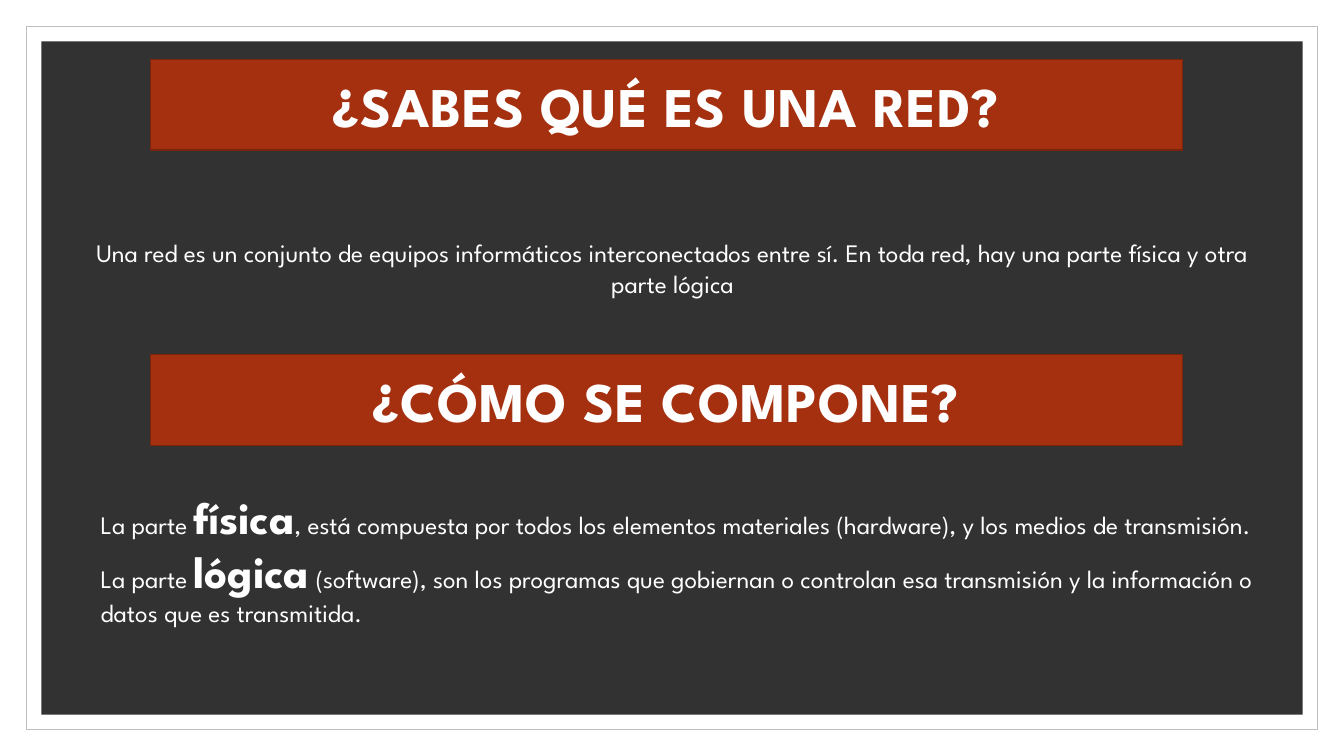
from dataclasses import dataclass

from lxml.etree import SubElement
from pptx import Presentation
from pptx.dml.color import RGBColor
from pptx.enum.shapes import MSO_SHAPE
from pptx.enum.text import MSO_ANCHOR, MSO_AUTO_SIZE, PP_ALIGN
from pptx.oxml.ns import qn
from pptx.util import Inches, Pt


@dataclass(frozen=True)
class Theme:
    font: str = "League Spartan"
    paper: str = "FFFFFF"
    frame_line: str = "BFBFBF"
    panel: str = "323232"
    banner: str = "A5300F"
    banner_line: str = "7A240B"
    banner_text: str = "FEFEFE"
    body_text: str = "FFFFFF"
    banner_size: int = 40
    key_size: int = 32
    body_size: int = 18


theme = Theme()


def paint(shape, fill, line=None, width=0):
    shape.shadow.inherit = False
    shape.fill.solid()
    shape.fill.fore_color.rgb = RGBColor.from_string(fill)
    if line:
        shape.line.color.rgb = RGBColor.from_string(line)
        shape.line.width = Pt(width)
    else:
        shape.line.fill.background()


def add_run(paragraph, text, size, color, bold=False):
    run = paragraph.add_run()
    run.text = text
    run.font.name = theme.font
    run.font.size = Pt(size)
    run.font.bold = bold
    run.font.color.rgb = RGBColor.from_string(color)
    return run


deck = Presentation()
deck.slide_width, deck.slide_height = Inches(13.33), Inches(7.5)
slide = deck.slides.add_slide(deck.slide_layouts[5])
shapes = slide.shapes

# Framed dark panel
for margin, fill, line in ((0.26, theme.paper, theme.frame_line),
                           (0.41, theme.panel, None)):
    inset = Inches(margin)
    panel = shapes.add_shape(MSO_SHAPE.RECTANGLE, inset, inset,
                             deck.slide_width - 2 * inset,
                             deck.slide_height - 2 * inset)
    paint(panel, fill, line, 0.5)

# Banners: the slide title and the second heading
heading = shapes.title
panel._element.addnext(heading._element)
composition = shapes.add_shape(MSO_SHAPE.RECTANGLE, 0, 0, 0, 0)
for banner, top, wording in ((heading, 0.59, "¿SABES QUÉ ES UNA RED?"),
                             (composition, 3.52, "¿CÓMO SE COMPONE?")):
    banner.left, banner.top = Inches(1.49), Inches(top)
    banner.width, banner.height = Inches(10.24), Inches(0.9)
    paint(banner, theme.banner, theme.banner_line, 1)
    frame = banner.text_frame
    frame.word_wrap = True
    frame.auto_size = MSO_AUTO_SIZE.NONE
    frame.vertical_anchor = MSO_ANCHOR.MIDDLE
    paragraph = frame.paragraphs[0]
    paragraph.alignment = PP_ALIGN.CENTER
    run = add_run(paragraph, wording, theme.banner_size, theme.banner_text, True)
    properties = run.font._element
    properties.set("spc", "50")
    outline = properties.makeelement(qn("a:ln"), {"w": str(Pt(0.75))})
    properties.insert(0, outline)
    outline_fill = SubElement(outline, qn("a:solidFill"))
    SubElement(outline_fill, qn("a:srgbClr"), val=theme.banner)

# Body texts: each paragraph is a list of (wording, is key word)
definition = [[("Una red es un conjunto de equipos informáticos interconectados "
                "entre sí. En toda red, hay una parte física y otra parte lógica",
                False)]]
parts = [
    [("La parte ", False), ("física", True),
     (", está compuesta por todos los elementos materiales (hardware), "
      "y los medios de transmisión.", False)],
    [("La parte ", False), ("lógica", True),
     (" (software), son los programas que gobiernan o controlan esa "
      "transmisión y la información o datos que es transmitida.", False)],
]
for left, top, height, alignment, paragraphs in (
        (0.72, 2.31, 0.71, PP_ALIGN.CENTER, definition),
        (0.9, 4.81, 2.09, PP_ALIGN.LEFT, parts)):
    body = shapes.add_textbox(Inches(left), Inches(top),
                              Inches(11.9), Inches(height)).text_frame
    body.word_wrap = True
    for number, pieces in enumerate(paragraphs):
        paragraph = body.add_paragraph() if number else body.paragraphs[0]
        paragraph.alignment = alignment
        for wording, is_key in pieces:
            size = theme.key_size if is_key else theme.body_size
            add_run(paragraph, wording, size, theme.body_text, is_key)

deck.save("out.pptx")
